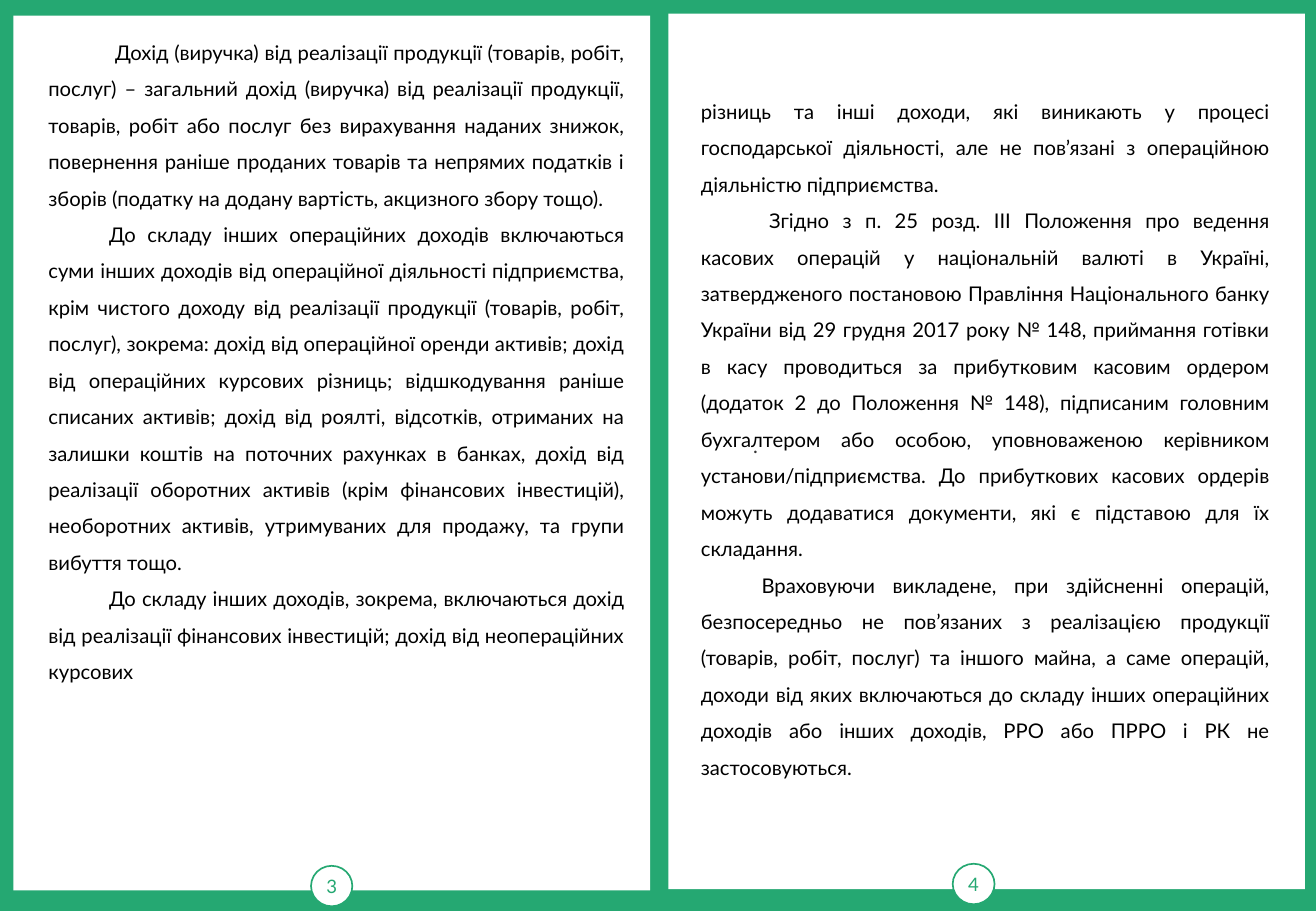
from pptx import Presentation
from pptx.dml.color import RGBColor
from pptx.enum.shapes import MSO_SHAPE
from pptx.enum.text import MSO_ANCHOR, PP_ALIGN
from pptx.util import Pt

GREEN, WHITE, BLACK, GREY = "25A872", "FFFFFF", "000000", "333333"

PAGES = [
    {
        "number": "3",
        "sheet": (7.9, 9.2, 377.3, 518.6),
        "badge": (184.3, 513.2, 24.5, 24),
        "body": (21.6, 13, 355.7, 509),
        "paragraphs": [
            (39.5, "Дохід (виручка) від реалізації продукції (товарів, робіт, послуг) – загальний дохід (виручка) від реалізації продукції, товарів, робіт або послуг без вирахування наданих знижок, повернення раніше проданих товарів та непрямих податків і зборів (податку на додану вартість, акцизного збору тощо)."),
            (36, "До складу інших операційних доходів включаються суми інших доходів від операційної діяльності підприємства, крім чистого доходу від реалізації продукції (товарів, робіт, послуг), зокрема: дохід від операційної оренди активів; дохід від операційних курсових різниць; відшкодування раніше списаних активів; дохід від роялті, відсотків, отриманих на залишки коштів на поточних рахунках в банках, дохід від реалізації оборотних активів (крім фінансових інвестицій), необоротних активів, утримуваних для продажу, та групи вибуття тощо."),
            (36, "До складу інших доходів, зокрема, включаються дохід від реалізації фінансових інвестицій; дохід від неопераційних курсових"),
        ],
    },
    {
        "number": "4",
        "sheet": (396, 8.1, 377.3, 518.9),
        "badge": (564.5, 512, 24.8, 24),
        "body": (408.2, 48, 351.4, 430),
        "paragraphs": [
            (0, "різниць та інші доходи, які виникають у процесі господарської діяльності, але не пов’язані з операційною діяльністю підприємства."),
            (40.5, "Згідно з п. 25 розд. III Положення про ведення касових операцій у національній валюті в Україні, затвердженого постановою Правління Національного банку України від 29 грудня 2017 року № 148, приймання готівки в касу проводиться за прибутковим касовим ордером (додаток 2 до Положення № 148), підписаним головним бухгалтером або особою, уповноваженою керівником установи/підприємства. До прибуткових касових ордерів можуть додаватися документи, які є підставою для їх складання."),
            (36, "Враховуючи викладене, при здійсненні операцій, безпосередньо не пов’язаних з реалізацією продукції (товарів, робіт, послуг) та іншого майна, а саме операцій, доходи від яких включаються до складу інших операційних доходів або інших доходів, РРО або ПРРО і РК не застосовуються."),
        ],
    },
]
DOT = {"box": (403.9, 16.6, 361.4, 492.5), "paragraphs": [(35.3, ".")]}


def color(hex_code):
    return RGBColor.from_string(hex_code)


def write(shape, paragraphs, size=12, ink=BLACK, align=PP_ALIGN.JUSTIFY,
          spacing=1.5, anchor=MSO_ANCHOR.TOP, inset=7.2):
    frame = shape.text_frame
    frame.word_wrap = True
    frame.vertical_anchor = anchor
    frame.margin_left = frame.margin_right = Pt(inset)
    frame.margin_top = frame.margin_bottom = Pt(inset / 2)
    for index, (indent, text) in enumerate(paragraphs):
        paragraph = frame.add_paragraph() if index else frame.paragraphs[0]
        paragraph.alignment = align
        paragraph.line_spacing = spacing
        if indent:
            paragraph._p.get_or_add_pPr().set("indent", str(Pt(indent)))
        run = paragraph.add_run()
        run.text = text
        run.font.name = "Lato"
        run.font.size = Pt(size)
        run.font.color.rgb = color(ink)


def add_panel(slide, kind, box, outline=None):
    panel = slide.shapes.add_shape(kind, *map(Pt, box))
    panel.shadow.inherit = False
    panel.fill.solid()
    panel.fill.fore_color.rgb = color(WHITE)
    if outline:
        panel.line.color.rgb = color(outline)
        panel.line.width = Pt(1)
    else:
        panel.line.fill.background()
    return panel


def main():
    deck = Presentation()
    deck.slide_width, deck.slide_height = Pt(779.76), Pt(540)
    slide = deck.slides.add_slide(deck.slide_layouts[6])
    slide.background.fill.solid()
    slide.background.fill.fore_color.rgb = color(GREEN)

    for page in PAGES:
        add_panel(slide, MSO_SHAPE.RECTANGLE, page["sheet"])
        badge = add_panel(slide, MSO_SHAPE.OVAL, page["badge"], outline=GREEN)
        write(badge, [(0, page["number"])], size=11, ink=GREEN, inset=0,
              align=PP_ALIGN.CENTER, spacing=1.0, anchor=MSO_ANCHOR.MIDDLE)
        body = slide.shapes.add_textbox(*map(Pt, page["body"]))
        write(body, page["paragraphs"])

    dot = slide.shapes.add_textbox(*map(Pt, DOT["box"]))
    write(dot, DOT["paragraphs"], ink=GREY, spacing=1.15, anchor=MSO_ANCHOR.MIDDLE)
    deck.save("out.pptx")


if __name__ == "__main__":
    main()
